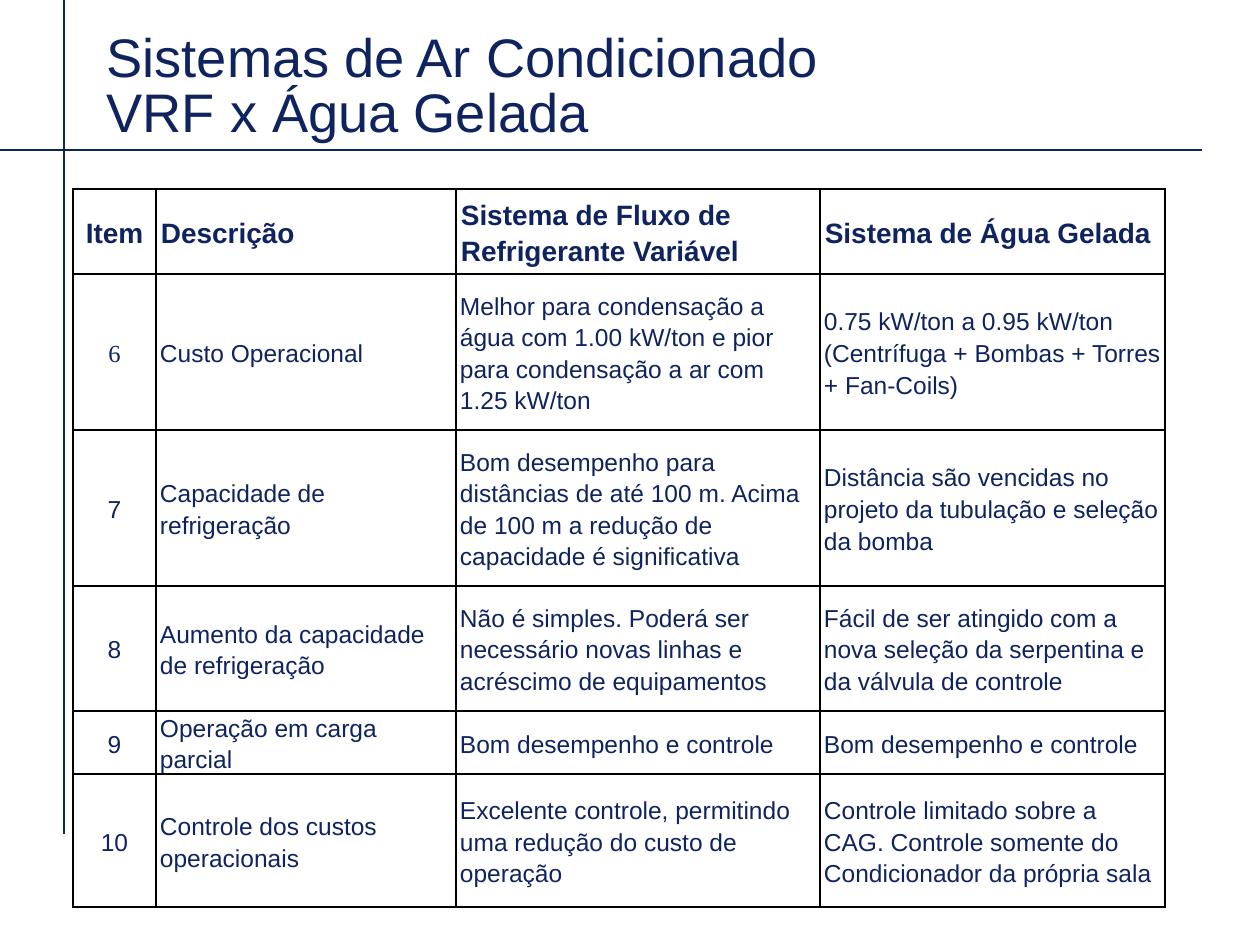
from dataclasses import dataclass

from lxml.etree import SubElement
from pptx import Presentation
from pptx.dml.color import RGBColor
from pptx.enum.shapes import MSO_CONNECTOR
from pptx.enum.text import MSO_ANCHOR as Anchor, MSO_AUTO_SIZE as AutoSize, PP_ALIGN as Align
from pptx.oxml.ns import qn
from pptx.util import Emu, Pt


@dataclass(frozen=True)
class Theme:
    navy: str = "0F245F"
    white: str = "FFFFFF"
    border: str = "000000"
    font: str = "Arial"
    serif: str = "Times New Roman"
    title_size: int = 31
    header_size: int = 16
    body_size: int = 14


THEME = Theme()
COLUMNS = (83, 300, 364, 345)
ROWS = (85, 156, 156, 125, 63, 133)
COMPARISON = (
    ("Item", "Descrição", "Sistema de Fluxo de Refrigerante Variável", "Sistema de Água Gelada"),
    ("6", "Custo Operacional",
     "Melhor para condensação a água com 1.00 kW/ton e pior para condensação a ar com 1.25 kW/ton",
     "0.75 kW/ton a 0.95 kW/ton (Centrífuga + Bombas + Torres + Fan-Coils)"),
    ("7", "Capacidade de refrigeração",
     "Bom desempenho para distâncias de até 100 m. Acima de 100 m a redução de capacidade é significativa",
     "Distância são vencidas no projeto da tubulação e seleção da bomba"),
    ("8", "Aumento da capacidade de refrigeração",
     "Não é simples. Poderá ser necessário novas linhas e acréscimo de equipamentos",
     "Fácil de ser atingido com a nova seleção da serpentina e da válvula de controle"),
    ("9", "Operação em carga parcial", "Bom desempenho e controle", "Bom desempenho e controle"),
    ("10", "Controle dos custos operacionais",
     "Excelente controle, permitindo uma redução do custo de operação",
     "Controle limitado sobre a CAG. Controle somente do Condicionador da própria sala"),
)


def px(count):
    """Turn pixels at 126 to the inch into EMU."""
    return Emu(round(count * 914400 / 126))


def style_paragraph(para, size, align, spacing, bold=False, name=THEME.font):
    """Set the alignment, line spacing and run fonts of a paragraph."""
    para.alignment, para.line_spacing = align, spacing
    for span in para.runs:
        font = span.font
        font.name, font.size, font.bold = name, Pt(size), bold
        font.color.rgb = RGBColor.from_string(THEME.navy)


def add_rule(page, start, end):
    """Draw a thin navy line between two points."""
    line = page.shapes.add_connector(MSO_CONNECTOR.STRAIGHT, *map(px, start + end))
    line.line.color.rgb = RGBColor.from_string(THEME.navy)
    line.line.width = Pt(0.75)
    SubElement(line._element.spPr, qn("a:effectLst"))


def set_title(page, text):
    """Place and format the title placeholder."""
    title = page.shapes.title
    title.left, title.top, title.width, title.height = map(px, (94, 21, 1124, 129))
    frame = title.text_frame
    frame.text = text
    frame.word_wrap, frame.auto_size = True, AutoSize.NONE
    frame.vertical_anchor = Anchor.BOTTOM
    style_paragraph(frame.paragraphs[0], THEME.title_size, Align.LEFT, 0.85)


def add_borders(cell):
    """Outline a cell on all four sides and fill it white."""
    properties = cell._tc.get_or_add_tcPr()
    for side in ("a:lnL", "a:lnR", "a:lnT", "a:lnB"):
        line = SubElement(properties, qn(side), w=str(Pt(1)))
        SubElement(SubElement(line, qn("a:solidFill")), qn("a:srgbClr"), val=THEME.border)
    cell.fill.solid()
    cell.fill.fore_color.rgb = RGBColor.from_string(THEME.white)


def fill_cell(cell, text, header, centred, name):
    """Write and format one table cell."""
    cell.text = text
    cell.vertical_anchor = Anchor.MIDDLE
    cell.margin_left = cell.margin_right = px(5 if header else 4)
    cell.margin_top = cell.margin_bottom = 0
    size = THEME.header_size if header else THEME.body_size
    align = Align.CENTER if centred else Align.LEFT
    style_paragraph(cell.text_frame.paragraphs[0], size, align, 1.15, header, name)
    add_borders(cell)


def add_comparison(page):
    """Add the table that compares the two systems."""
    area = map(px, (73, 189, sum(COLUMNS), sum(ROWS)))
    table = page.shapes.add_table(len(ROWS), len(COLUMNS), *area).table
    table.first_row = table.horz_banding = False
    for column, width in zip(table.columns, COLUMNS):
        column.width = px(width)
    for row, height, texts in zip(table.rows, ROWS, COMPARISON):
        row.height = px(height)
        for index, (cell, text) in enumerate(zip(row.cells, texts)):
            name = THEME.serif if text == "6" else THEME.font
            fill_cell(cell, text, texts is COMPARISON[0], index == 0, name)


def main():
    """Build the deck and save it."""
    deck = Presentation()
    deck.slide_width, deck.slide_height = px(1260), px(945)
    page = deck.slides.add_slide(deck.slide_layouts[5])
    add_rule(page, (64, 834), (64, 0))
    add_rule(page, (0, 150), (1202, 150))
    set_title(page, "Sistemas de Ar Condicionado\vVRF x Água Gelada")
    add_comparison(page)
    deck.save("out.pptx")


if __name__ == "__main__":
    main()
